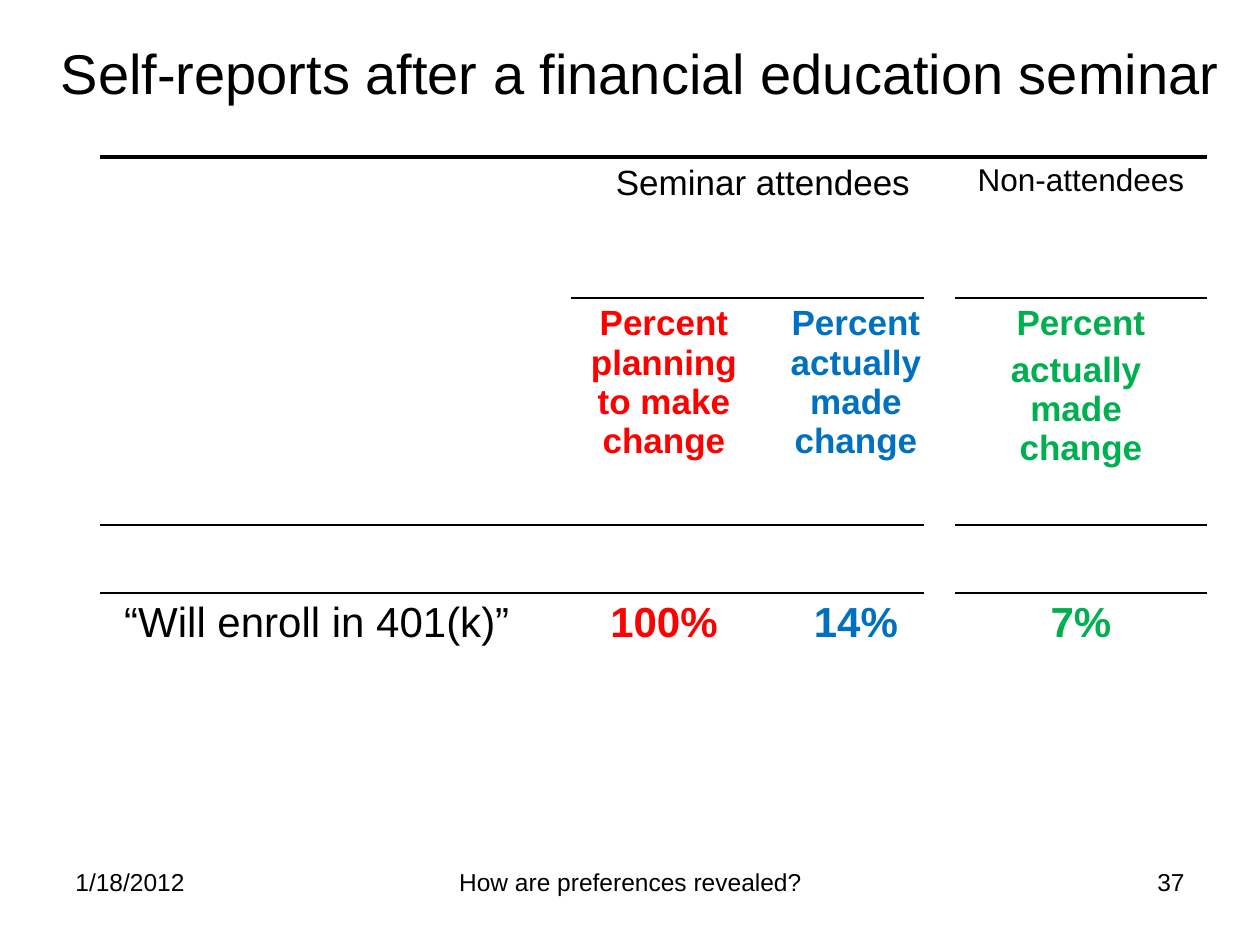
"""Builds the slide on self-reports after a financial education seminar."""
from lxml.etree import SubElement
from pptx import Presentation
from pptx.dml.color import RGBColor
from pptx.enum.shapes import MSO_SHAPE as SHAPE
from pptx.enum.text import MSO_ANCHOR as ANCHOR, PP_ALIGN as ALIGN
from pptx.oxml.ns import qn
from pptx.util import Pt

PX = 914400 / 126
FONT = "Arial"
NO_STYLE = "{2D5ABB26-0587-4C30-8999-92F81FD0307C}"
COLORS = {"black": "000000", "white": "FFFFFF", "red": "FF0000",
          "blue": "0070C0", "green": "00B050"}

TITLE = "Self-reports after a financial education seminar"
TITLE_AREA = (21, 38, 1239, 69)
FOOTERS = [
    ("1/18/2012", (63, 861, 294, 66), ALIGN.LEFT),
    ("How are preferences revealed?", (431, 861, 399, 66), ALIGN.CENTER),
    ("37", (903, 861, 294, 66), ALIGN.RIGHT),
]
TABLE_CORNER = (100, 157)
COLUMNS = [471, 186, 198, 252]
ROWS = [141, 227, 68, 92]
GAP_AREA = (924, 199, 31, 535)

CELLS = {
    (0, 1): (["Seminar attendees"], {"size": 20}),
    (0, 3): (["Non-attendees"], {"size": 18}),
    (1, 1): (["Percent planning to make change"], {"size": 20, "color": "red", "bold": True}),
    (1, 2): (["Percent actually made change"], {"size": 20, "color": "blue", "bold": True}),
    (1, 3): (["Percent", "actually \vmade \vchange"], {"size": 20, "color": "green", "bold": True}),
    (3, 0): ([" “Will enroll in 401(k)”"], {"size": 24, "align": ALIGN.LEFT}),
    (3, 1): (["100%"], {"size": 24, "color": "red", "bold": True}),
    (3, 2): (["14%"], {"size": 24, "color": "blue", "bold": True}),
    (3, 3): (["7%"], {"size": 24, "color": "green", "bold": True}),
}
RULES = [(0, range(0, 4), 2.25), (1, range(1, 4), 1), (2, range(0, 4), 1)]


def emu(*lengths):
    return [round(length * PX) for length in lengths]


def write(frame, paragraphs, size, color="black", bold=False, align=ALIGN.CENTER, before=0):
    frame.word_wrap = True
    for index, text in enumerate(paragraphs):
        para = frame.paragraphs[0] if index == 0 else frame.add_paragraph()
        para.text = text
        para.alignment = align
        para.space_before = Pt(before)
        for span in para.runs:
            span.font.name = FONT
            span.font.size = Pt(size)
            span.font.bold = bold
            span.font.color.rgb = RGBColor.from_string(COLORS[color])


def add_border(cell, side, width):
    line = SubElement(cell._tc.get_or_add_tcPr(), qn("a:" + side), w=str(Pt(width)))
    fill = SubElement(line, qn("a:solidFill"))
    SubElement(fill, qn("a:srgbClr"), val=COLORS["black"])


def add_results(page):
    area = emu(*TABLE_CORNER, sum(COLUMNS), sum(ROWS))
    frame = page.shapes.add_table(len(ROWS), len(COLUMNS), *area)
    table = frame.table
    table.first_row = table.horz_banding = False
    table._tbl.tblPr.find(qn("a:tableStyleId")).text = NO_STYLE
    for tracks, name, lengths in ((table.columns, "width", COLUMNS), (table.rows, "height", ROWS)):
        for track, length in zip(tracks, emu(*lengths)):
            setattr(track, name, length)
    table.cell(0, 1).merge(table.cell(0, 2))
    for (row, column), (paragraphs, style) in CELLS.items():
        write(table.cell(row, column).text_frame, paragraphs, before=style["size"] / 5, **style)
    table.cell(3, 0).text_frame.paragraphs[0].runs[0].font.size = Pt(24)
    for row in range(len(ROWS)):
        for column in range(len(COLUMNS)):
            cell = table.cell(row, column)
            for edge, columns, width in RULES:
                if column in columns and edge in (row, row + 1):
                    add_border(cell, "lnT" if edge == row else "lnB", width)
            cell.fill.background()


def main():
    deck = Presentation()
    deck.slide_width, deck.slide_height = emu(1260, 945)
    page = deck.slides.add_slide(deck.slide_layouts[5])

    title = page.shapes.title
    title.left, title.top, title.width, title.height = emu(*TITLE_AREA)
    title.text_frame.vertical_anchor = ANCHOR.MIDDLE
    write(title.text_frame, [TITLE], size=32)

    for text, area, align in FOOTERS:
        box = page.shapes.add_textbox(*emu(*area))
        write(box.text_frame, [text], size=14, align=align)

    add_results(page)

    gap = page.shapes.add_shape(SHAPE.RECTANGLE, *emu(*GAP_AREA))
    gap.shadow.inherit = False
    gap.fill.solid()
    gap.fill.fore_color.rgb = RGBColor.from_string(COLORS["white"])
    gap.line.fill.background()

    deck.save("out.pptx")


if __name__ == "__main__":
    main()
